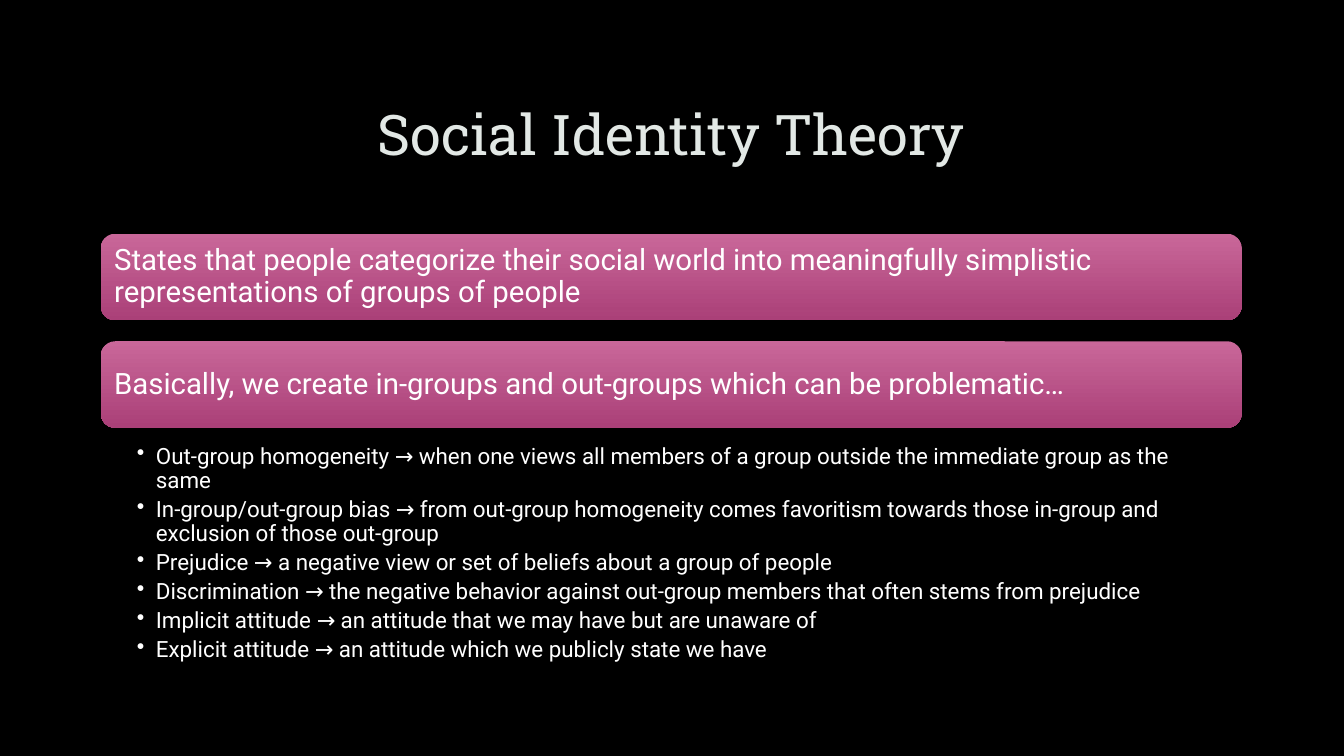
from dataclasses import dataclass

from lxml import etree
from pptx import Presentation
from pptx.dml.color import RGBColor
from pptx.enum import shapes, text
from pptx.oxml import ns
from pptx.util import Cm, Pt

TITLE = "Social Identity Theory"
STATEMENTS = [
    "States that people categorize their social world into meaningfully simplistic representations of groups of people",
    "Basically, we create in-groups and out-groups which can be problematic…",
]
TERMS = [
    ("Out-group homogeneity",
     "when one views all members of a group outside the immediate group as the same"),
    ("In-group/out-group bias",
     "from out-group homogeneity comes favoritism towards those in-group and exclusion of those out-group"),
    ("Prejudice", "a negative view or set of beliefs about a group of people"),
    ("Discrimination", "the negative behavior against out-group members that often stems from prejudice"),
    ("Implicit attitude", "an attitude that we may have but are unaware of"),
    ("Explicit attitude", "an attitude which we publicly state we have"),
]


@dataclass(frozen=True)
class Theme:
    background: str = "000000"
    title: str = "E2E8E5"
    body: str = "FFFFFF"
    card_top: str = "C96799"
    card_bottom: str = "AA4078"
    title_font: str = "Roboto Slab"
    body_font: str = "Roboto"
    title_size: int = 40
    card_size: int = 21
    term_size: int = 16


THEME = Theme()
LEFT, WIDTH = Cm(2.54), Cm(28.75)
TITLE_TOP, TITLE_HEIGHT = Cm(1.7), Cm(3.5)
CARD_TOP, CARD_HEIGHT, CARD_GAP = Cm(5.89), Cm(2.18), Cm(0.53)
TERMS_TOP, TERMS_HEIGHT = Cm(11.13), Cm(4.85)
TERM_INDENT = Cm(0.48)


def set_frame(shape, anchor, left, top, right, bottom):
    """Wrap the shape's text and set its anchor and margins in centimetres."""
    frame = shape.text_frame
    frame.word_wrap = True
    frame.vertical_anchor = anchor
    frame.margin_left, frame.margin_top = Cm(left), Cm(top)
    frame.margin_right, frame.margin_bottom = Cm(right), Cm(bottom)
    return frame


def style(paragraph, font_name, size, color, alignment=text.PP_ALIGN.LEFT):
    paragraph.alignment = alignment
    paragraph.line_spacing = 0.9
    font = paragraph.font
    font.name, font.size = font_name, Pt(size)
    font.color.rgb = RGBColor.from_string(color)


def add_bullet(paragraph):
    properties = paragraph._p.get_or_add_pPr()
    properties.set("marL", str(TERM_INDENT))
    properties.set("indent", str(-TERM_INDENT))
    etree.SubElement(properties, ns.qn("a:buChar")).set("char", "•")


def add_title(slide):
    shape = slide.shapes.add_textbox(LEFT, TITLE_TOP, WIDTH, TITLE_HEIGHT)
    frame = set_frame(shape, text.MSO_ANCHOR.MIDDLE, 0.25, 0.13, 0.25, 0.13)
    frame.text = TITLE
    style(frame.paragraphs[0], THEME.title_font, THEME.title_size, THEME.title,
          text.PP_ALIGN.CENTER)


def add_card(slide, top, statement):
    shape = slide.shapes.add_shape(
        shapes.MSO_SHAPE.ROUNDED_RECTANGLE, LEFT, top, WIDTH, CARD_HEIGHT)
    shape.shadow.inherit = False
    shape.line.fill.background()
    shape.fill.gradient()
    shape.fill.gradient_angle = 270
    for stop, color in zip(shape.fill.gradient_stops, (THEME.card_top, THEME.card_bottom)):
        stop.color.rgb = RGBColor.from_string(color)
    frame = set_frame(shape, text.MSO_ANCHOR.MIDDLE, 0.23, 0.23, 0.23, 0.23)
    frame.text = statement
    style(frame.paragraphs[0], THEME.body_font, THEME.card_size, THEME.body)


def add_terms(slide):
    shape = slide.shapes.add_textbox(LEFT, TERMS_TOP, WIDTH, TERMS_HEIGHT)
    frame = set_frame(shape, text.MSO_ANCHOR.TOP, 0.91, 0.08, 0.41, 0.08)
    frame.text = "\n".join(f"{term} → {meaning}" for term, meaning in TERMS)
    for paragraph in frame.paragraphs:
        add_bullet(paragraph)
        style(paragraph, THEME.body_font, THEME.term_size, THEME.body)
        paragraph.space_after = Pt(3.5)


def main():
    presentation = Presentation()
    presentation.slide_width, presentation.slide_height = Cm(33.87), Cm(19.05)
    slide = presentation.slides.add_slide(presentation.slide_layouts[6])
    slide.background.fill.solid()
    slide.background.fill.fore_color.rgb = RGBColor.from_string(THEME.background)
    add_title(slide)
    for row, statement in enumerate(STATEMENTS):
        add_card(slide, CARD_TOP + row * (CARD_HEIGHT + CARD_GAP), statement)
    add_terms(slide)
    presentation.save("out.pptx")


if __name__ == "__main__":
    main()
